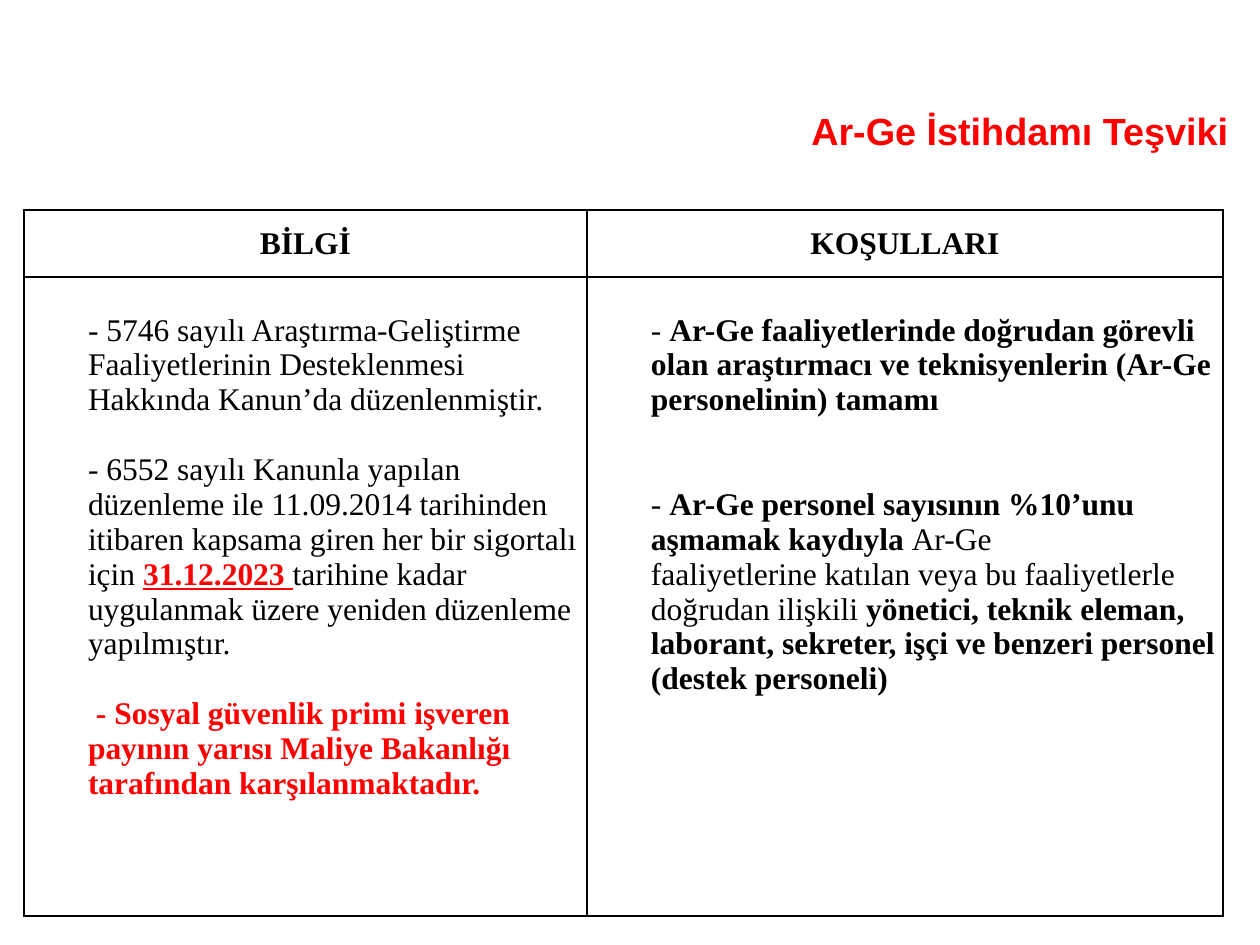
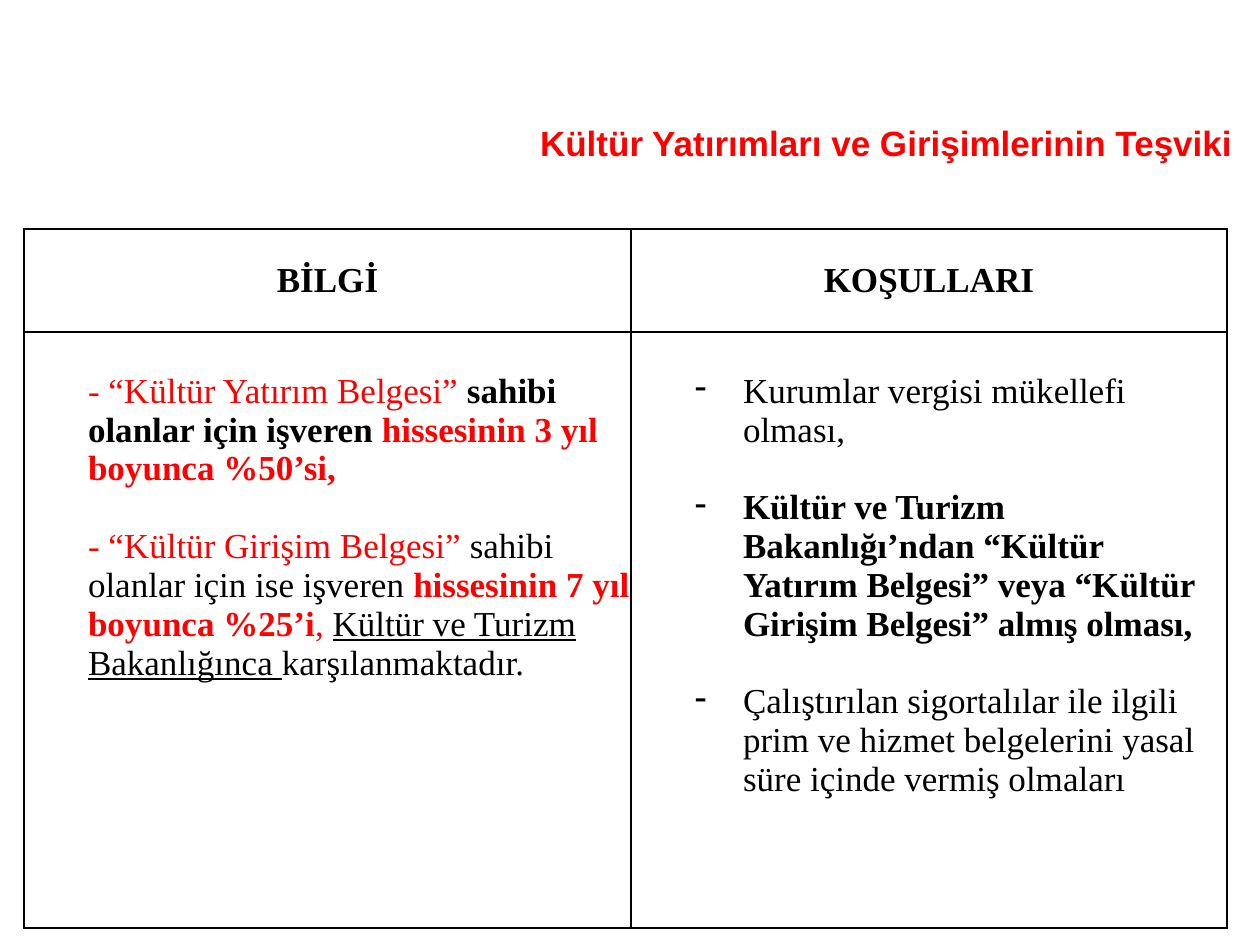
from lxml.etree import SubElement
from pptx import Presentation
from pptx.dml.color import RGBColor
from pptx.enum.text import MSO_ANCHOR as Anchor, PP_ALIGN as Align
from pptx.oxml.ns import qn
from pptx.util import Emu, Pt

SCALE = 914400 / 126  # EMU per px
COLORS = {"paper": "FFFFFF", "ink": "000000", "accent": "FF0000"}
TITLE_FONT, TABLE_FONT = "Arial", "Times New Roman"
HEADERS = ["BİLGİ", "KOŞULLARI"]
LINE_RATIO = 1.107  # line height of the table font

# Run formats
PLAIN = {"color": "ink"}
BOLD = {"color": "ink", "bold": True}
RED = {"color": "accent"}
RED_BOLD = {"color": "accent", "bold": True}
RED_DATE = {"color": "accent", "bold": True, "underline": True}
UNDERLINED = {"color": "ink", "underline": True}

# Paragraph indents in px: left margin, first line, bullet
BLOCK = (63, 0, None)
NUDGED = (63, 8, None)
DASHED = (111, -48, "-")

# A paragraph is: blank lines above it, indent, runs
SLIDES = [
    {
        "title": "Ar-Ge İstihdamı Teşviki",
        "title_box": (538, 103, 703, 54), "title_size": 21.6,
        "origin": (24, 210), "columns": (563, 636), "rows": (67, 639), "size": 18,
        "body": [
            [
                (0, BLOCK, [("- 5746 sayılı Araştırma-Geliştirme Faaliyetlerinin "
                             "Desteklenmesi Hakkında Kanun’da düzenlenmiştir.", PLAIN)]),
                (1, BLOCK, [("- 6552 sayılı Kanunla yapılan düzenleme ile 11.09.2014 tarihinden "
                             "itibaren kapsama giren her bir sigortalı için ", PLAIN),
                            ("31.12.2023 ", RED_DATE),
                            ("tarihine kadar uygulanmak üzere yeniden düzenleme yapılmıştır.", PLAIN)]),
                (1, NUDGED, [("- Sosyal güvenlik primi işveren payının yarısı Maliye Bakanlığı "
                              "tarafından karşılanmaktadır.", RED_BOLD)]),
            ],
            [
                (0, BLOCK, [("- ", PLAIN),
                            ("Ar-Ge faaliyetlerinde doğrudan görevli olan araştırmacı ve "
                             "teknisyenlerin (Ar-Ge personelinin) tamamı", BOLD)]),
                (2, BLOCK, [("- ", PLAIN),
                            ("Ar-Ge personel sayısının %10’unu aşmamak kaydıyla ", BOLD),
                            ("Ar-Ge", PLAIN)]),
                (0, BLOCK, [("faaliyetlerine katılan veya bu faaliyetlerle doğrudan ilişkili ", PLAIN),
                            ("yönetici, teknik eleman, laborant, sekreter, işçi ve benzeri "
                             "personel (destek personeli)", BOLD)]),
            ],
        ],
    },
    {
        "title": "Kültür Yatırımları ve Girişimlerinin Teşviki",
        "title_box": (369, 98, 876, 88), "title_size": 20,
        "origin": (24, 229), "columns": (607, 596), "rows": (103, 596), "size": 20,
        "body": [
            [
                (0, BLOCK, [("- “Kültür Yatırım Belgesi” ", RED),
                            ("sahibi olanlar için işveren ", BOLD),
                            ("hissesinin 3 yıl boyunca %50’si,", RED_BOLD)]),
                (1, BLOCK, [("- “Kültür Girişim Belgesi”", RED),
                            (" sahibi olanlar için ise işveren ", PLAIN),
                            ("hissesinin 7 yıl boyunca %25’i", RED_BOLD),
                            (", ", RED),
                            ("Kültür ve Turizm Bakanlığınca ", UNDERLINED),
                            ("karşılanmaktadır.", PLAIN)]),
            ],
            [
                (0, DASHED, [("Kurumlar vergisi mükellefi olması,", PLAIN)]),
                (1, DASHED, [("Kültür ve Turizm Bakanlığı’ndan “Kültür Yatırım Belgesi” veya "
                              "“Kültür Girişim Belgesi” almış olması,", BOLD)]),
                (1, DASHED, [("Çalıştırılan sigortalılar ile ilgili prim ve hizmet belgelerini "
                              "yasal süre içinde vermiş olmaları", PLAIN)]),
            ],
        ],
    },
]


def px(length):
    return Emu(round(length * SCALE))


def add_run(paragraph, text, font_name, size, style):
    run = paragraph.add_run()
    run.text = text
    values = {"name": font_name, "size": Pt(size), "bold": False, "underline": False, **style}
    run.font.color.rgb = RGBColor.from_string(COLORS[values.pop("color")])
    for attribute, value in values.items():
        setattr(run.font, attribute, value)


def add_title(slide, content):
    frame = slide.shapes.add_textbox(*map(px, content["title_box"])).text_frame
    frame.word_wrap = True
    frame.vertical_anchor = Anchor.MIDDLE
    paragraph = frame.paragraphs[0]
    paragraph.alignment = Align.RIGHT
    add_run(paragraph, content["title"], TITLE_FONT, content["title_size"], RED_BOLD)


def prepare_cell(cell, anchor, top):
    """Set the borders, fill, margins and anchor of a cell."""
    properties = cell._tc.get_or_add_tcPr()
    for side in ("lnL", "lnR", "lnT", "lnB"):
        border = SubElement(properties, qn(f"a:{side}"), w=str(Pt(1)))
        fill = SubElement(border, qn("a:solidFill"))
        SubElement(fill, qn("a:srgbClr"), val=COLORS["ink"])
    cell.fill.solid()
    cell.fill.fore_color.rgb = RGBColor.from_string(COLORS["paper"])
    margins = {"margin_left": 1, "margin_right": 1, "margin_top": top, "margin_bottom": 0}
    for attribute, length in margins.items():
        setattr(cell, attribute, px(length))
    cell.vertical_anchor = anchor


def write_body(cell, paragraphs, size):
    frame = cell.text_frame
    for number, (blank_lines, (left, first, bullet), runs) in enumerate(paragraphs):
        paragraph = frame.add_paragraph() if number else frame.paragraphs[0]
        paragraph.alignment = Align.LEFT
        if blank_lines:
            paragraph.space_before = Pt(round(blank_lines * size * LINE_RATIO, 2))
        properties = paragraph._p.get_or_add_pPr()
        properties.set("marL", str(px(left)))
        properties.set("indent", str(px(first)))
        if bullet:
            SubElement(properties, qn("a:buChar"), char=bullet)
        else:
            SubElement(properties, qn("a:buNone"))
        for text, style in runs:
            add_run(paragraph, text, TABLE_FONT, size, style)


def add_incentive_table(slide, content):
    columns, rows, size = content["columns"], content["rows"], content["size"]
    bounds = (*content["origin"], sum(columns), sum(rows))
    table = slide.shapes.add_table(len(rows), len(columns), *map(px, bounds)).table
    table.first_row = table.horz_banding = False
    for row, height in zip(table.rows, rows):
        row.height = px(height)
    line_px = round(size * LINE_RATIO * 126 / 72)
    for index, (header, body) in enumerate(zip(HEADERS, content["body"])):
        table.columns[index].width = px(columns[index])
        header_cell, body_cell = table.cell(0, index), table.cell(1, index)
        prepare_cell(header_cell, Anchor.MIDDLE, 1)
        heading = header_cell.text_frame.paragraphs[0]
        heading.alignment = Align.CENTER
        add_run(heading, header, TABLE_FONT, size, BOLD)
        prepare_cell(body_cell, Anchor.TOP, 1 + line_px)
        write_body(body_cell, body, size)


def main():
    deck = Presentation()
    deck.slide_width, deck.slide_height = px(1260), px(945)
    for content in SLIDES:
        slide = deck.slides.add_slide(deck.slide_layouts[6])
        add_title(slide, content)
        add_incentive_table(slide, content)
    deck.save("out.pptx")


if __name__ == "__main__":
    main()
